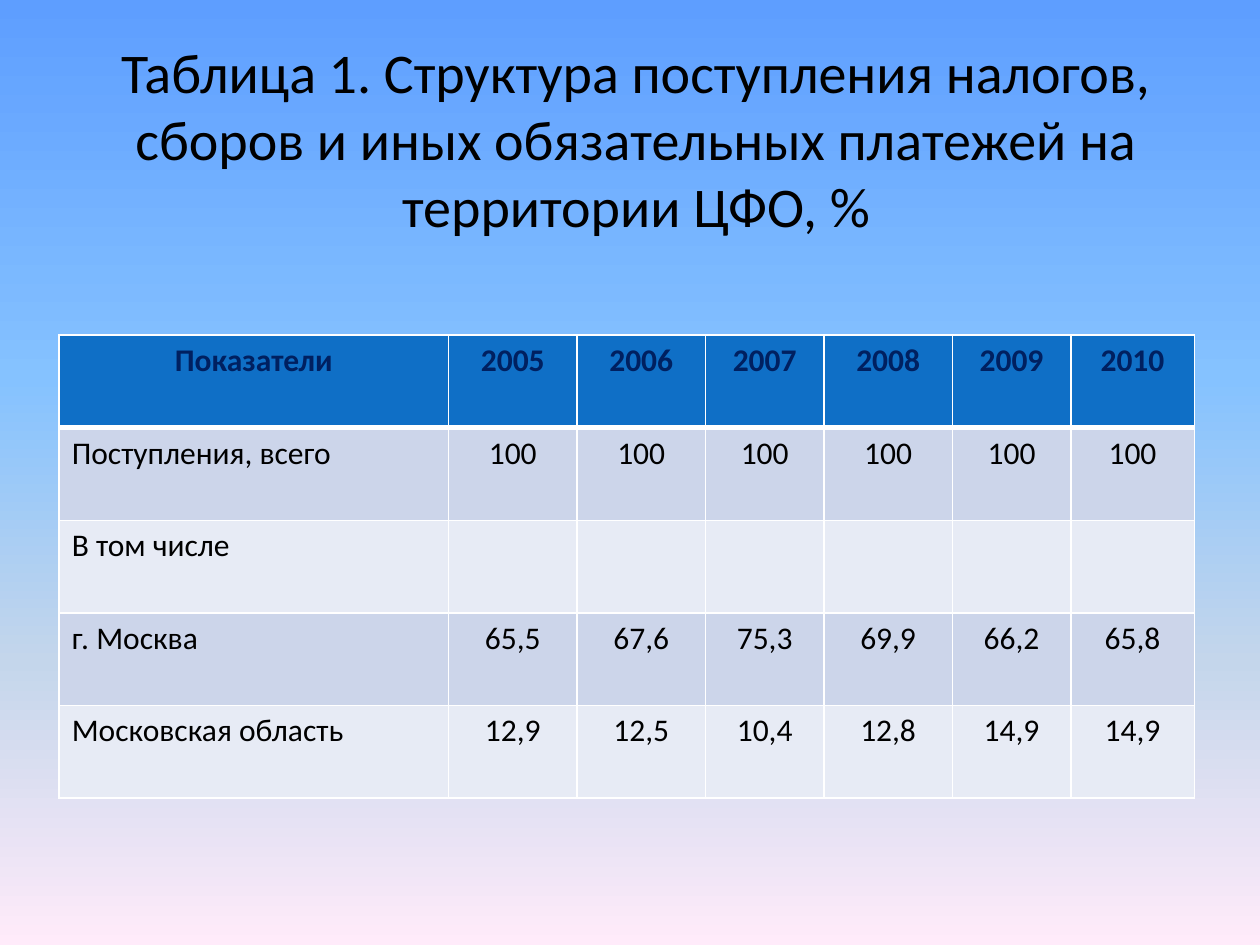
from dataclasses import dataclass

from lxml import etree
from pptx import Presentation
from pptx.dml.color import RGBColor
from pptx.enum import text
from pptx.oxml import ns
from pptx.util import Inches, Pt


@dataclass(frozen=True)
class Theme:
    font: str = "Calibri"
    title: int = 32
    body: int = 18
    ink: str = "000000"
    navy: str = "002060"
    head: str = "0F6FC6"
    bands: tuple = ("CCD5EA", "E7EBF5")
    line: str = "FFFFFF"
    thin: int = 1
    thick: int = 3
    sky: tuple = ((0, "5E9EFF"), (40, "85C2FF"), (70, "C4D6EB"), (100, "FFEBFA"))


@dataclass(frozen=True)
class Row:
    label: str
    values: tuple
    head: bool = False


THEME = Theme()
TITLE = ("Таблица 1. Структура поступления налогов, сборов и иных "
         "обязательных платежей на территории ЦФО, %")
WIDTHS = (3.09, 1.02, 1.02, 0.94, 1.02, 0.94, 0.98)
HEIGHT = 0.735
ROWS = (
    Row("Показатели", tuple(str(year) for year in range(2005, 2011)), True),
    Row("Поступления, всего", ("100",) * 6),
    Row("В том числе", ("",) * 6),
    Row("г. Москва", ("65,5", "67,6", "75,3", "69,9", "66,2", "65,8")),
    Row("Московская область", ("12,9", "12,5", "10,4", "12,8", "14,9", "14,9")),
)


def add_color(parent, color: str) -> None:
    etree.SubElement(parent, ns.qn("a:srgbClr"), val=color)


def paint_sky(slide) -> None:
    """Fill the background with a gradient running from top to bottom."""
    fill = slide.background.fill
    fill.gradient()
    fill.gradient_angle = 270
    stops = next(slide.element.iter(ns.qn("a:gsLst")))
    for stop in list(stops):
        stops.remove(stop)
    for place, color in THEME.sky:
        stop = etree.SubElement(stops, ns.qn("a:gs"), pos=str(place * 1000))
        add_color(stop, color)


def write(frame, words: str, size: int, color: str,
          center: bool = True, bold: bool = False) -> None:
    para = frame.paragraphs[0]
    para.alignment = text.PP_ALIGN.CENTER if center else text.PP_ALIGN.LEFT
    if not words:
        para.font.size = Pt(size)
        return
    run = para.add_run()
    run.text = words
    run.font.name = THEME.font
    run.font.size = Pt(size)
    run.font.bold = bold
    run.font.color.rgb = RGBColor.from_string(color)


def add_edges(cell, top: int, bottom: int) -> None:
    """Draw the four cell borders; they must come before the fill."""
    props = cell._tc.get_or_add_tcPr()
    sides = {"L": THEME.thin, "R": THEME.thin, "T": top, "B": bottom}
    for side, width in sides.items():
        edge = etree.SubElement(props, ns.qn(f"a:ln{side}"), w=str(Pt(width)))
        add_color(etree.SubElement(edge, ns.qn("a:solidFill")), THEME.line)


def add_title(slide) -> None:
    box = slide.shapes.add_textbox(Inches(0.55), Inches(0.39), Inches(9), Inches(1.41))
    frame = box.text_frame
    frame.word_wrap = True
    frame.vertical_anchor = text.MSO_ANCHOR.MIDDLE
    write(frame, TITLE, THEME.title, THEME.ink)


def add_grid(slide) -> None:
    grid = slide.shapes.add_table(
        len(ROWS), len(WIDTHS), Inches(0.47), Inches(2.66),
        Inches(sum(WIDTHS)), Inches(HEIGHT * len(ROWS))).table
    grid.horz_banding = False
    grid.first_row = False
    for col, width in zip(grid.columns, WIDTHS):
        col.width = Inches(width)
    for r, row in enumerate(ROWS):
        grid.rows[r].height = Inches(HEIGHT)
        fill = THEME.head if row.head else THEME.bands[(r - 1) % 2]
        ink = THEME.navy if row.head else THEME.ink
        top = THEME.thick if r == 1 else THEME.thin
        bottom = THEME.thick if row.head else THEME.thin
        for c, words in enumerate((row.label, *row.values)):
            cell = grid.cell(r, c)
            add_edges(cell, top, bottom)
            cell.fill.solid()
            cell.fill.fore_color.rgb = RGBColor.from_string(fill)
            write(cell.text_frame, words, THEME.body, ink,
                  center=row.head or c > 0, bold=row.head)


def main() -> None:
    deck = Presentation()
    deck.slide_width, deck.slide_height = Inches(10), Inches(7.5)
    slide = deck.slides.add_slide(deck.slide_layouts[6])
    paint_sky(slide)
    add_title(slide)
    add_grid(slide)
    deck.save("out.pptx")


if __name__ == "__main__":
    main()
